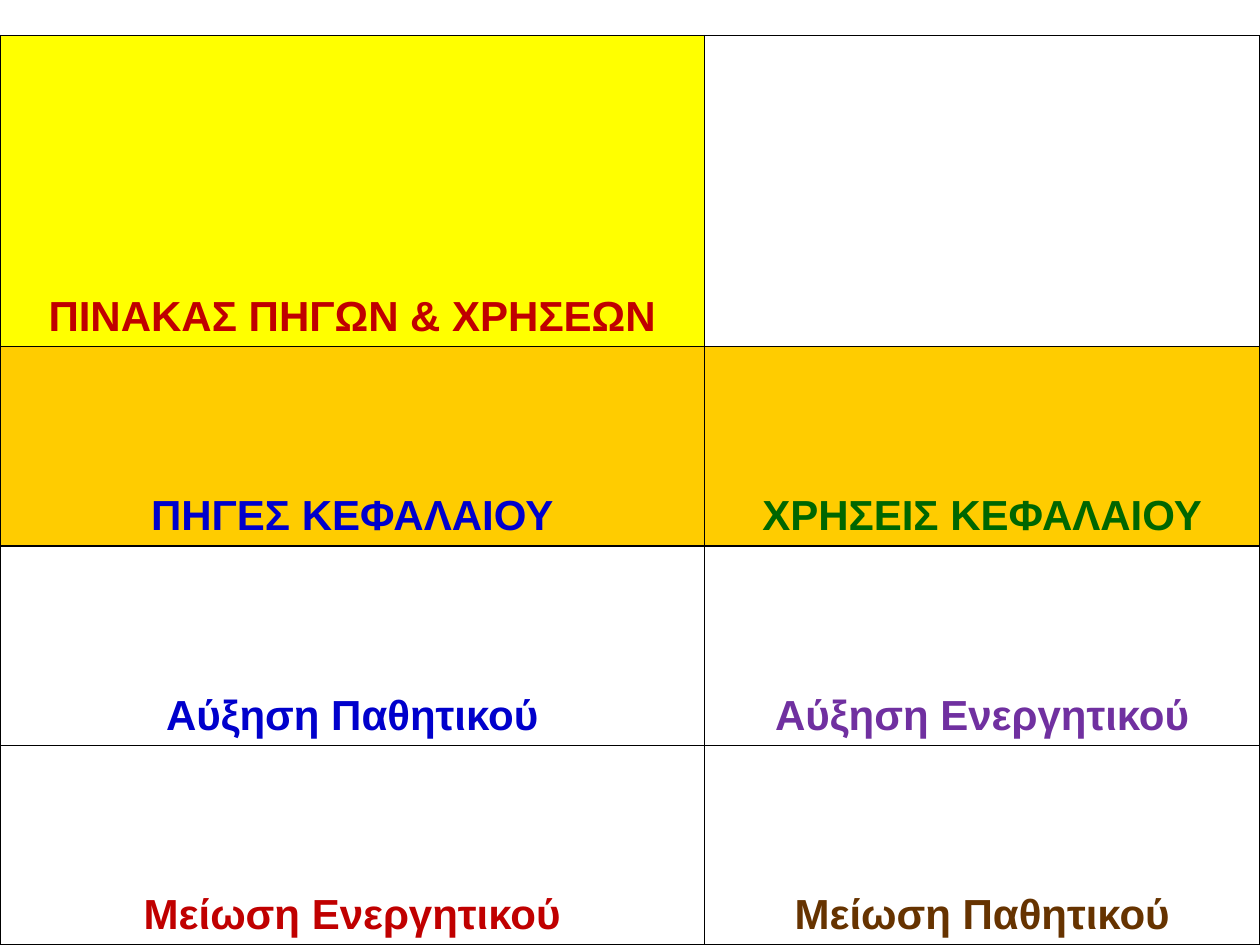
from pptx import Presentation
from pptx.dml.color import RGBColor
from pptx.enum.text import MSO_ANCHOR as Anchor, PP_ALIGN as Align
from pptx.oxml import parse_xml
from pptx.oxml.ns import nsdecls
from pptx.util import Pt

WIDE, HIGH, TOP = 720, 540, 20.4
COLS = [402.5, 317.5]
HEAD = 177.6
REST = (HIGH - TOP - HEAD) / 3
INDENT = 27

# Each cell: text, text colour, fill colour
ROWS = [
    [("ΠΙΝΑΚΑΣ ΠΗΓΩΝ & ΧΡΗΣΕΩΝ", "C00000", "FFFF00"), ("", "000000", None)],
    [("ΠΗΓΕΣ ΚΕΦΑΛΑΙΟΥ", "0000CC", "FFCC00"),
     ("ΧΡΗΣΕΙΣ ΚΕΦΑΛΑΙΟΥ", "006600", "FFCC00")],
    [("Αύξηση Παθητικού", "0000CC", None),
     ("Αύξηση Ενεργητικού", "7030A0", None)],
    [("Μείωση Ενεργητικού", "C00000", None),
     ("Μείωση Παθητικού", "663300", None)],
]
FONT = {"name": "Arial", "size": Pt(24), "bold": True}
FLAGS = {"first_row": False, "horz_banding": False}


def color(code):
    return RGBColor.from_string(code)


def apply(obj, values):
    for name, value in values.items():
        setattr(obj, name, value)


def add_edges(cell, code="000000", width=1):
    props = cell._tc.get_or_add_tcPr()
    for spot, side in enumerate("LRTB"):
        props.insert(spot, parse_xml(
            f'<a:ln{side} {nsdecls("a")} w="{Pt(width)}"><a:solidFill>'
            f'<a:srgbClr val="{code}"/></a:solidFill></a:ln{side}>'))


def fill_cell(cell, text, ink, back):
    cell.vertical_anchor = Anchor.BOTTOM
    if back:
        cell.fill.solid()
        cell.fill.fore_color.rgb = color(back)
    else:
        cell.fill.background()
    add_edges(cell)
    if not text:
        return
    # Centred line with a hanging indent
    para = cell.text_frame.paragraphs[0]
    para.alignment = Align.CENTER
    props = para._p.get_or_add_pPr()
    props.set("marL", str(Pt(INDENT)))
    props.set("indent", str(Pt(-INDENT)))
    run = para.add_run()
    run.text = text
    apply(run.font, FONT)
    run.font.color.rgb = color(ink)


def add_grid(slide):
    grid = slide.shapes.add_table(
        len(ROWS), len(COLS), Pt(0), Pt(TOP), Pt(WIDE), Pt(HIGH - TOP)).table
    apply(grid, FLAGS)
    for col, width in zip(grid.columns, COLS):
        col.width = Pt(width)
    for i, row in enumerate(ROWS):
        grid.rows[i].height = Pt(REST if i else HEAD)
        for j, item in enumerate(row):
            fill_cell(grid.cell(i, j), *item)


def main():
    deck = Presentation()
    apply(deck, {"slide_width": Pt(WIDE), "slide_height": Pt(HIGH)})
    slide = deck.slides.add_slide(deck.slide_layouts[6])
    # Table of sources and uses of capital
    add_grid(slide)
    deck.save("out.pptx")


if __name__ == "__main__":
    main()
